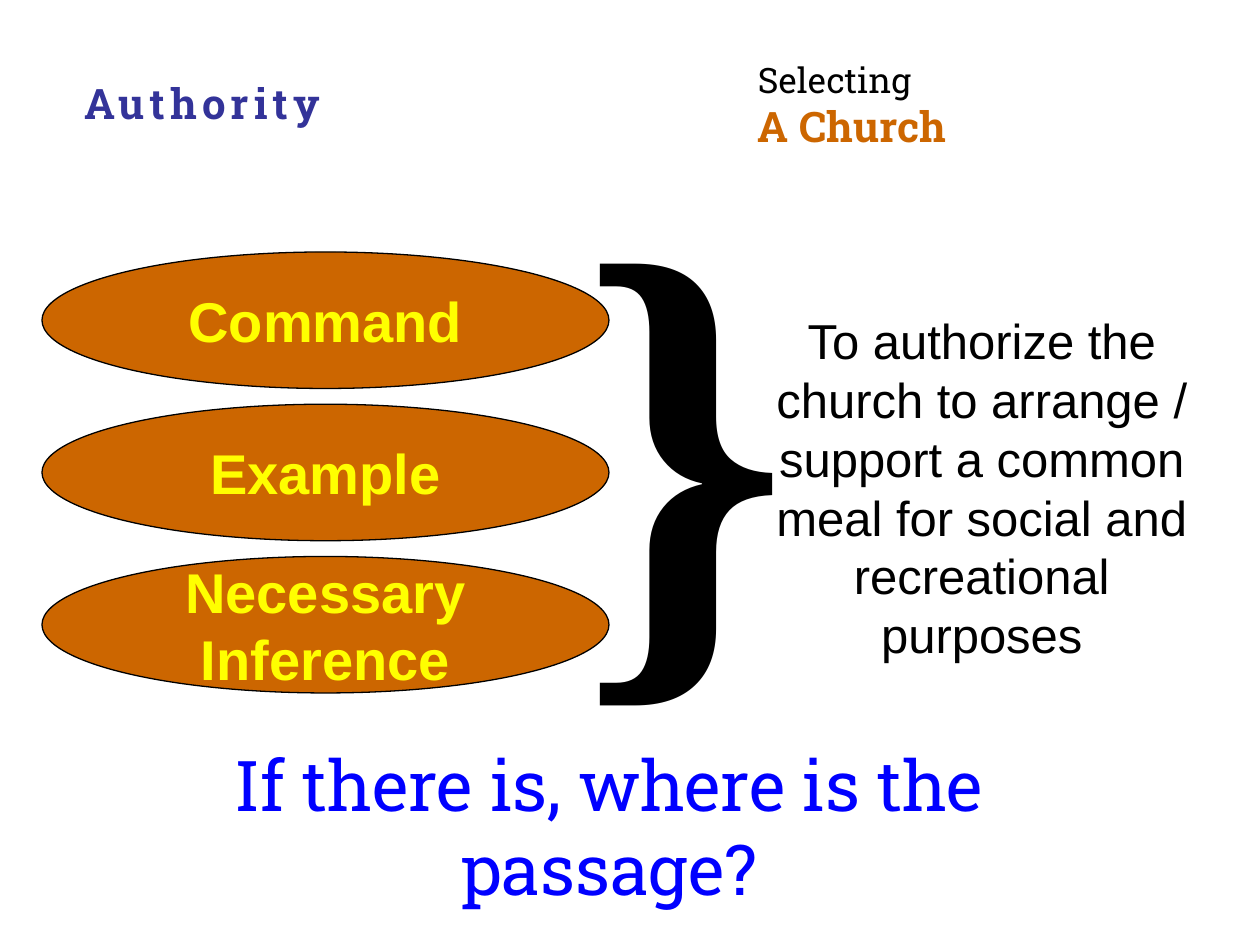
from pptx import Presentation
from pptx.dml.color import RGBColor
from pptx.enum.shapes import MSO_SHAPE
from pptx.enum.text import MSO_ANCHOR, MSO_AUTO_SIZE, PP_ALIGN
from pptx.util import Pt

COLORS = {"orange": "CC6600", "yellow": "FFFF00", "black": "000000",
          "blue": "0000FF", "navy": "333399"}
SLAB, SANS, SERIF = "Roboto Slab", "Arial", "Times New Roman"


def style(name, size, color, bold=False):
    return {"name": name, "size": Pt(size), "bold": bold, "color": color}


LEFT, CENTER = PP_ALIGN.LEFT, PP_ALIGN.CENTER
SOURCES = [["Command"], ["Example"], ["Necessary", "Inference"]]
SOURCE_STYLE = style(SANS, 32, "yellow", True)
OVAL = {"left": 24, "top": 144, "width": 324, "height": 78, "step": 87}

# box (left, top, width, height), wrap, alignment, letter spacing, paragraphs
TEXTS = [
    ((426, 30, 284, 60.5), False, LEFT, 0,
     [("Selecting", style(SLAB, 20, "black")),
      ("A Church", style(SLAB, 24, "orange", True))]),
    ((324, 54, 134.5, 373), False, LEFT, 0,
     [("}", style(SERIF, 305, "black", True))]),
    ((432, 174, 258, 211), True, CENTER, 0,
     [("To authorize the church to arrange / support a common meal "
       "for social and recreational purposes", style(SANS, 28, "black"))]),
    ((60, 420, 576, 104.5), True, CENTER, 0,
     [("If there is, where is the passage?", style(SLAB, 40, "blue"))]),
    ((41, 41, 247, 49), False, LEFT, 3,
     [("Authority", style(SLAB, 24, "navy", True))]),
]


def rgb(color):
    return RGBColor.from_string(COLORS[color])


def write(tf, paragraphs, align, spacing=0):
    for i, (text, fmt) in enumerate(paragraphs):
        p = tf.add_paragraph() if i else tf.paragraphs[0]
        p.alignment = align
        r = p.add_run()
        r.text = text
        for key, value in fmt.items():
            if key == "color":
                r.font.color.rgb = rgb(value)
            else:
                setattr(r.font, key, value)
        if spacing:
            r.font._element.set("spc", str(spacing * 100))


def add_oval(s, row, lines):
    top = OVAL["top"] + row * OVAL["step"]
    sp = s.shapes.add_shape(MSO_SHAPE.OVAL, Pt(OVAL["left"]), Pt(top),
                            Pt(OVAL["width"]), Pt(OVAL["height"]))
    sp.shadow.inherit = False
    sp.fill.solid()
    sp.fill.fore_color.rgb = rgb("orange")
    sp.line.color.rgb = rgb("black")
    sp.line.width = Pt(0.75)
    tf = sp.text_frame
    tf.word_wrap = False
    tf.vertical_anchor = MSO_ANCHOR.MIDDLE
    write(tf, [(line, SOURCE_STYLE) for line in lines], CENTER)


def main():
    prs = Presentation()
    prs.slide_width, prs.slide_height = Pt(720), Pt(540)
    s = prs.slides.add_slide(prs.slide_layouts[6])
    for row, lines in enumerate(SOURCES):
        add_oval(s, row, lines)
    for box, wrap, align, spacing, paragraphs in TEXTS:
        tf = s.shapes.add_textbox(*map(Pt, box)).text_frame
        tf.word_wrap = wrap
        tf.auto_size = MSO_AUTO_SIZE.SHAPE_TO_FIT_TEXT
        write(tf, paragraphs, align, spacing)
    prs.save("out.pptx")


if __name__ == "__main__":
    main()
